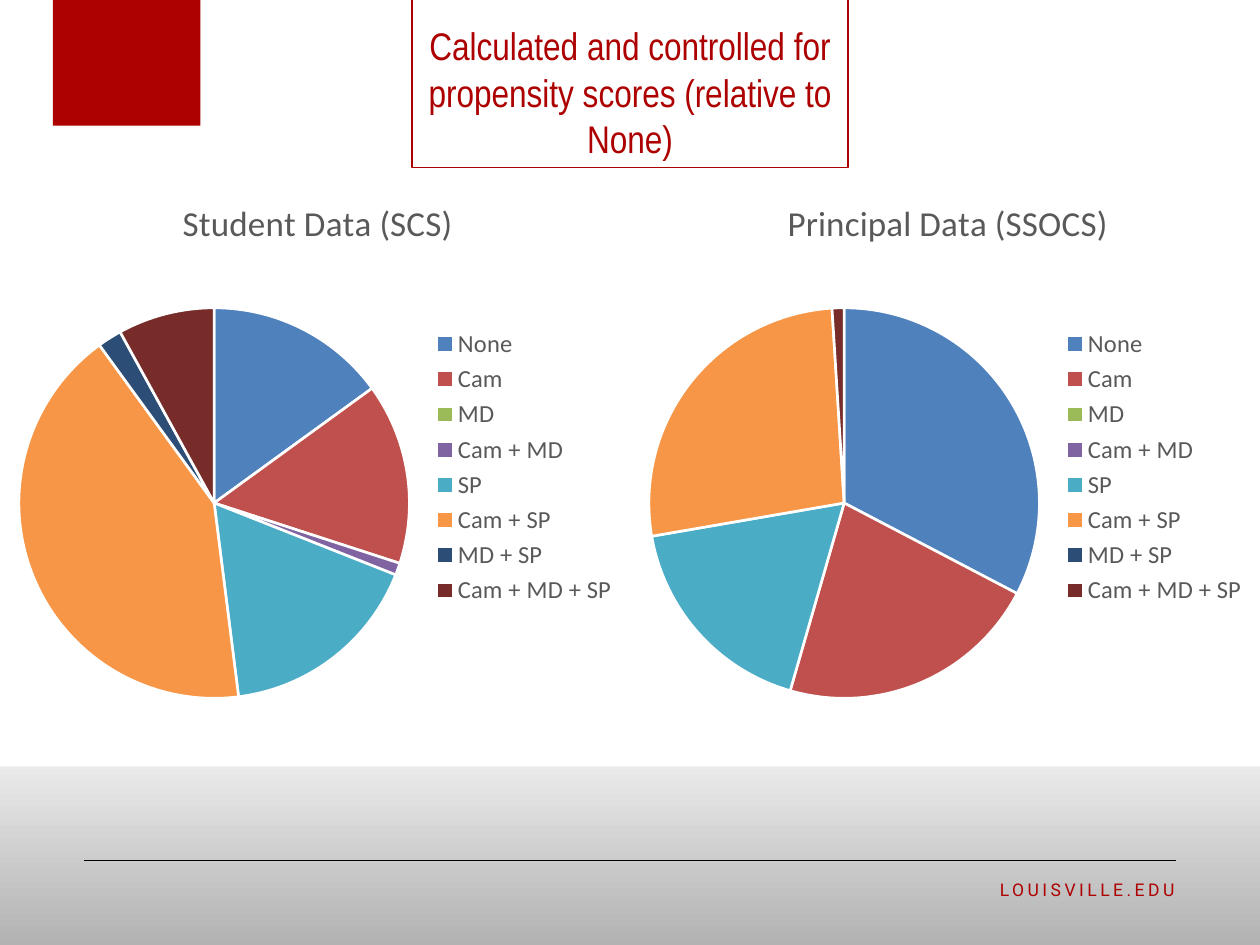
from dataclasses import dataclass

from lxml import etree
from pptx import Presentation
from pptx.chart.data import CategoryChartData
from pptx.dml.color import RGBColor
from pptx.enum.chart import XL_CHART_TYPE, XL_LEGEND_POSITION
from pptx.enum.shapes import MSO_CONNECTOR, MSO_SHAPE
from pptx.enum.text import MSO_ANCHOR, MSO_AUTO_SIZE, PP_ALIGN
from pptx.oxml.ns import qn
from pptx.slide import Slide
from pptx.util import Inches, Length, Pt

PIE = XL_CHART_TYPE.PIE
LEGEND_RIGHT = XL_LEGEND_POSITION.RIGHT
STRAIGHT = MSO_CONNECTOR.STRAIGHT
RECTANGLE = MSO_SHAPE.RECTANGLE
BOTTOM = MSO_ANCHOR.BOTTOM
FIT_SHAPE = MSO_AUTO_SIZE.SHAPE_TO_FIT_TEXT
CENTER, RIGHT = PP_ALIGN.CENTER, PP_ALIGN.RIGHT

SLIDE_WIDTH, SLIDE_HEIGHT = 10, 7.5
TITLE_ONLY = 5


@dataclass(frozen=True)
class Theme:
    red: str = "AD0000"
    white: str = "FFFFFF"
    gray: str = "B2B2B2"
    black: str = "000000"
    chart_text: str = "595959"
    slices: tuple[str, ...] = ("4F81BD", "C0504D", "9BBB59", "8064A2",
                               "4BACC6", "F79646", "2C4D75", "772C2A")
    title_font: str = "Arial Narrow"
    chart_font: str = "Calibri"
    footer_font: str = "Roboto"
    title_size: int = 22
    chart_title_size: int = 20
    legend_size: int = 14
    footer_size: int = 10


@dataclass(frozen=True)
class Box:
    left: float
    top: float
    width: float
    height: float

    def lengths(self) -> tuple[Length, Length, Length, Length]:
        return (Inches(self.left * SLIDE_WIDTH), Inches(self.top * SLIDE_HEIGHT),
                Inches(self.width * SLIDE_WIDTH), Inches(self.height * SLIDE_HEIGHT))


@dataclass(frozen=True)
class Survey:
    title: str
    title_left: float
    shares: tuple[int, ...]


THEME = Theme()
TITLE = "Calculated and controlled for propensity scores (relative to None)"
TITLE_BOX = Box(0.327, 0.016, 0.346, 0.161)
BLOCK_BOX = Box(0.042, 0, 0.117, 0.133)
FOOTER_BOX = Box(0.717, 0.924, 0.225, 0.053)
RULE_BOX = Box(0.067, 0.911, 0.866, 0)
CHART_TOP, CHART_HEIGHT = 0.178, 0.633
MEASURES = ("None", "Cam", "MD", "Cam + MD", "SP", "Cam + SP", "MD + SP", "Cam + MD + SP")
SURVEYS = (
    Survey("Student Data (SCS)", 0.28, (15, 15, 0, 1, 17, 42, 2, 8)),
    Survey("Principal Data (SSOCS)", 0.24, (33, 22, 0, 0, 18, 27, 0, 1)),
)


def rgb(color: str) -> RGBColor:
    return RGBColor.from_string(color)


def style_font(font, face: str, size: int, color: str) -> None:
    font.name, font.size, font.bold = face, Pt(size), False
    font.color.rgb = rgb(color)


def place(shape, box: Box) -> None:
    shape.left, shape.top, shape.width, shape.height = box.lengths()


def set_layout(parent, **shares: float) -> None:
    layout = parent.find(qn("c:layout"))
    if layout is None:
        layout = etree.Element(qn("c:layout"))
        parent.insert(0, layout)
    manual = etree.SubElement(layout, qn("c:manualLayout"))
    if "w" in shares:
        etree.SubElement(manual, qn("c:layoutTarget"), val="inner")
    for axis in ("x", "y"):
        etree.SubElement(manual, qn(f"c:{axis}Mode"), val="edge")
    for key, share in shares.items():
        etree.SubElement(manual, qn(f"c:{key}"), val=str(share))


def paint_background(slide: Slide) -> None:
    fill = slide.background.fill
    fill.gradient()
    fill.gradient_angle = 270
    for stop, position, color in zip(fill.gradient_stops, (0.74, 1), (THEME.white, THEME.gray)):
        stop.position = position
        stop.color.rgb = rgb(color)


def add_block(slide: Slide) -> None:
    block = slide.shapes.add_shape(RECTANGLE, *BLOCK_BOX.lengths())
    block.shadow.inherit = False
    block.fill.solid()
    block.fill.fore_color.rgb = rgb(THEME.red)
    block.line.fill.background()


def add_footer(slide: Slide) -> None:
    left, top, width, _ = RULE_BOX.lengths()
    rule = slide.shapes.add_connector(STRAIGHT, left + width, top, left, top)
    rule.line.color.rgb = rgb(THEME.black)
    rule.line.width = Pt(0.5)
    etree.SubElement(rule.element.spPr, qn("a:effectLst"))

    frame = slide.shapes.add_textbox(*FOOTER_BOX.lengths()).text_frame
    frame.word_wrap = True
    frame.text = "LOUISVILLE.EDU"
    address = frame.paragraphs[0]
    address.alignment = RIGHT
    style_font(address.runs[0].font, THEME.footer_font, THEME.footer_size, THEME.red)
    address.runs[0].font.element.set("spc", "200") if hasattr(
        address.runs[0].font, "element") else address.runs[0]._r.get_or_add_rPr().set("spc", "200")


def add_title(slide: Slide) -> None:
    title = slide.shapes.title
    place(title, TITLE_BOX)
    title.line.color.rgb = rgb(THEME.red)
    title.line.width = Pt(0.75)
    frame = title.text_frame
    frame.text = TITLE
    frame.word_wrap = True
    frame.auto_size = FIT_SHAPE
    frame.vertical_anchor = BOTTOM
    heading = frame.paragraphs[0]
    heading.alignment = CENTER
    style_font(heading.runs[0].font, THEME.title_font, THEME.title_size, THEME.red)


def add_pie(slide: Slide, survey: Survey, column: int) -> None:
    data = CategoryChartData()
    data.categories = MEASURES
    data.add_series("Series 1", survey.shares)
    width = 1 / len(SURVEYS)
    box = Box(column * width, CHART_TOP, width, CHART_HEIGHT)
    chart = slide.shapes.add_chart(PIE, *box.lengths(), data).chart
    style_font(chart.font, THEME.chart_font, THEME.legend_size, THEME.chart_text)

    chart.has_title = True
    heading = chart.chart_title.text_frame
    heading.text = survey.title
    style_font(heading.paragraphs[0].runs[0].font, THEME.chart_font,
               THEME.chart_title_size, THEME.chart_text)
    chart.has_legend = True
    chart.legend.position = LEGEND_RIGHT
    chart.legend.include_in_layout = False
    style_font(chart.legend.font, THEME.chart_font, THEME.legend_size, THEME.chart_text)

    chart.plots[0].vary_by_categories = True
    for index, color in enumerate(THEME.slices):
        piece = chart.plots[0].series[0].points[index].format
        piece.fill.solid()
        piece.fill.fore_color.rgb = rgb(color)
        piece.line.color.rgb = rgb(THEME.white)
        piece.line.width = Pt(1.5)

    body = chart.element.find(qn("c:chart"))
    set_layout(chart.chart_title.element if hasattr(chart.chart_title, "element")
               else body.find(qn("c:title")), x=survey.title_left, y=0.04)
    set_layout(body.find(qn("c:plotArea")), x=0.03, y=0.23, w=0.62, h=0.66)
    surface = etree.Element(qn("c:spPr"))
    paint = etree.SubElement(surface, qn("a:solidFill"))
    etree.SubElement(paint, qn("a:srgbClr"), val=THEME.white)
    border = etree.SubElement(surface, qn("a:ln"))
    etree.SubElement(border, qn("a:noFill"))
    body.addnext(surface)


def main() -> None:
    deck = Presentation()
    deck.slide_width, deck.slide_height = Inches(SLIDE_WIDTH), Inches(SLIDE_HEIGHT)
    slide = deck.slides.add_slide(deck.slide_layouts[TITLE_ONLY])
    paint_background(slide)
    add_block(slide)
    add_footer(slide)
    for column, survey in enumerate(SURVEYS):
        add_pie(slide, survey, column)
    add_title(slide)
    deck.save("out.pptx")


if __name__ == "__main__":
    main()
